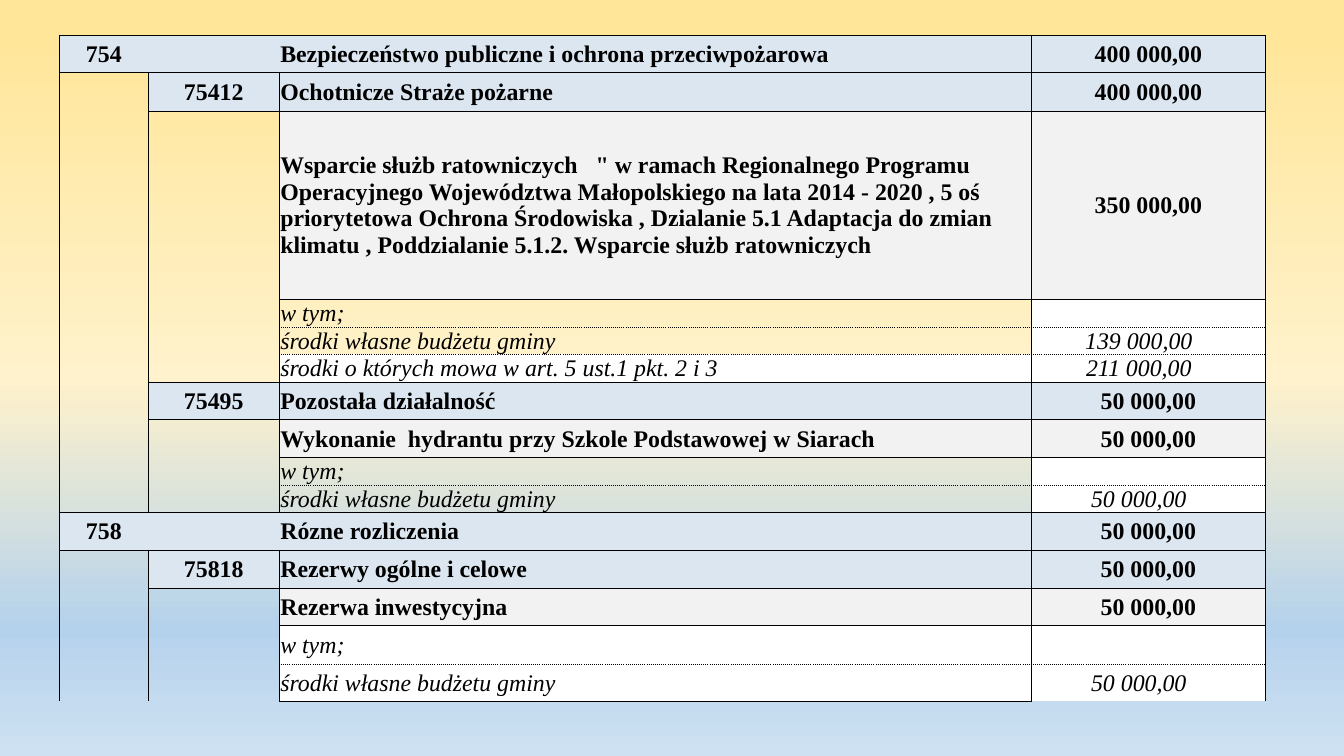
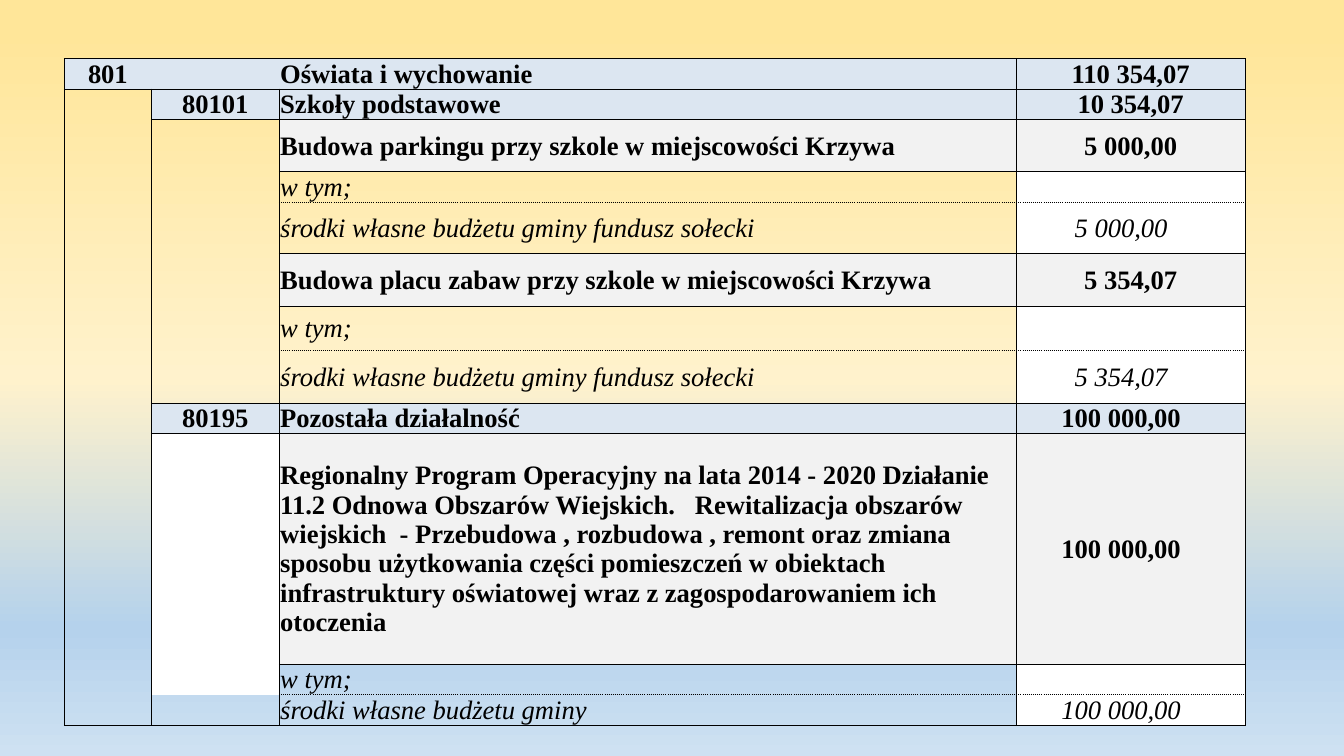
from lxml.etree import SubElement
from pptx import Presentation
from pptx.dml.color import RGBColor
from pptx.enum.text import MSO_ANCHOR, PP_ALIGN
from pptx.oxml.ns import qn
from pptx.util import Inches, Pt

COLORS = {
    "black": "000000",
    "white": "FFFFFF",
    "blue": "DCE6F1",
    "grey": "F2F2F2",
}
BACKDROP = [(4, "FFE699"), (50, "FFF2CC"), (83, "B5D2EC"), (100, "CEE1F2")]
FONT = "Times New Roman"
PLAIN_TABLE_STYLE = "{2D5ABB26-0587-4C30-8999-92F81FD0307C}"
FILLS = {"division": "blue", "chapter": "blue", "task": "grey", "detail": "white"}
FIRST_FILLED = {"division": 0, "chapter": 1, "task": 2, "detail": 3}
OWN_FUNDS = "środki własne budżetu gminy"
VILLAGE_FUND = "środki własne budżetu gminy fundusz sołecki"

TABLES = [
    {
        "left": 0.59, "top": 0.35, "size": 17,
        "columns": [0.88, 1.3, 7.46, 2.32],
        "white": {(5, 2), (13, 2), (14, 2)},
        "shifted": set(),
        "closed_columns": {2},
        "merges": {},
        "rows": [
            ("division", 0.37, "754", "Bezpieczeństwo publiczne i ochrona przeciwpożarowa", "400 000,00"),
            ("chapter", 0.38, "75412", "Ochotnicze Straże pożarne", "400 000,00"),
            ("task", 1.87, "", "Wsparcie służb ratowniczych   \" w ramach Regionalnego Programu "
             "Operacyjnego Województwa Małopolskiego na lata 2014 - 2020 , 5 oś priorytetowa "
             "Ochrona Środowiska , Dzialanie 5.1 Adaptacja do zmian klimatu , "
             "Poddzialanie 5.1.2. Wsparcie służb ratowniczych", "350 000,00"),
            ("detail", 0.27, "", "w tym;", ""),
            ("detail", 0.27, "", OWN_FUNDS, "139 000,00"),
            ("detail", 0.27, "", "środki o których mowa w art. 5 ust.1 pkt. 2 i 3", "211 000,00"),
            ("chapter", 0.37, "75495", "Pozostała działalność", "50 000,00"),
            ("task", 0.38, "", "Wykonanie  hydrantu przy Szkole Podstawowej w Siarach", "50 000,00"),
            ("detail", 0.27, "", "w tym;", ""),
            ("detail", 0.27, "", OWN_FUNDS, "50 000,00"),
            ("division", 0.37, "758", "Rózne rozliczenia", "50 000,00"),
            ("chapter", 0.38, "75818", "Rezerwy ogólne i celowe", "50 000,00"),
            ("task", 0.37, "", "Rezerwa inwestycyjna", "50 000,00"),
            ("detail", 0.38, "", "w tym;", ""),
            ("detail", 0.37, "", OWN_FUNDS, "50 000,00"),
        ],
    },
    {
        "left": 0.64, "top": 0.58, "size": 19,
        "columns": [0.86, 1.27, 7.31, 2.27],
        "white": {(10, 1), (11, 1)},
        "shifted": {9, 10},
        "closed_columns": {0, 1, 2, 3},
        "merges": {(2, 1): 8, (6, 2): 7, (6, 3): 7, (7, 0): 8},
        "rows": [
            ("division", 0.3, "801", "Oświata i wychowanie", "110 354,07"),
            ("chapter", 0.3, "80101", "Szkoły podstawowe", "10 354,07"),
            ("task", 0.52, "", "Budowa parkingu przy szkole w miejscowości Krzywa", "5 000,00"),
            ("detail", 0.3, "", "w tym;", ""),
            ("detail", 0.51, "", VILLAGE_FUND, "5 000,00"),
            ("task", 0.52, "", "Budowa placu zabaw przy szkole w miejscowości Krzywa", "5 354,07"),
            ("detail", 0.3, "", "w tym;", ""),
            ("detail", 0.14, "", "", ""),
            ("detail", 0.52, "", VILLAGE_FUND, "5 354,07"),
            ("chapter", 0.3, "80195", "Pozostała działalność", "100 000,00"),
            ("task", 2.29, "", "Regionalny Program Operacyjny na lata 2014 - 2020 Działanie 11.2 "
             "Odnowa Obszarów Wiejskich.   Rewitalizacja obszarów wiejskich  - Przebudowa , "
             "rozbudowa , remont oraz zmiana sposobu użytkowania części pomieszczeń w obiektach "
             "infrastruktury oświatowej wraz z zagospodarowaniem ich otoczenia", "100 000,00"),
            ("detail", 0.3, "", "w tym;", ""),
            ("detail", 0.3, "", OWN_FUNDS, "100 000,00"),
        ],
    },
]


def add_border(cell, side, width, dash):
    line = SubElement(cell._tc.get_or_add_tcPr(), qn(f"a:ln{side}"), w=str(Pt(width)))
    if dash:
        fill = SubElement(line, qn("a:solidFill"))
        SubElement(fill, qn("a:srgbClr"), val=COLORS["black"])
        SubElement(line, qn("a:prstDash"), val=dash)
    else:
        SubElement(line, qn("a:noFill"))


def edge_above(kinds, row, column, closed_columns):
    if row == len(kinds):
        return "solid" if column in closed_columns else None
    kind = kinds[row]
    previous = kinds[row - 1] if row else None
    if column >= 2:
        return "sysDot" if kind == previous == "detail" else "solid"
    heads = ("division", "chapter")[:column + 1]
    return "solid" if kind in heads or previous in heads else None


deck = Presentation()
deck.slide_width, deck.slide_height = Inches(13.33), Inches(7.5)

master = deck.slide_master
backdrop = master.background.fill
backdrop.gradient()
backdrop.gradient_angle = 270
stops = master.element.xpath(".//p:bg//a:gsLst")[0]
stops.clear()
for position, color in BACKDROP:
    stop = SubElement(stops, qn("a:gs"), pos=str(position * 1000))
    SubElement(stop, qn("a:srgbClr"), val=color)

for plan in TABLES:
    page = deck.slides.add_slide(deck.slide_layouts[6])
    rows, columns = plan["rows"], plan["columns"]
    kinds = [row[0] for row in rows]
    frame = page.shapes.add_table(
        len(rows), len(columns), Inches(plan["left"]), Inches(plan["top"]),
        Inches(sum(columns)), Inches(sum(row[1] for row in rows)))
    table = frame.table
    table.first_row = table.horz_banding = False
    table._tbl.tblPr.find(qn("a:tableStyleId")).text = PLAIN_TABLE_STYLE
    for column, width in enumerate(columns):
        table.columns[column].width = Inches(width)
    for (first, column), last in plan["merges"].items():
        table.cell(first, column).merge(table.cell(last, column))

    for index, (kind, height, code, name, amount) in enumerate(rows):
        table.rows[index].height = Inches(height)
        texts = ["", "", name, amount]
        texts[0 if kind == "division" else 1] = code
        for column, text in enumerate(texts):
            cell = table.cell(index, column)
            cell.vertical_anchor = MSO_ANCHOR.MIDDLE
            cell.margin_left = cell.margin_right = cell.margin_top = Inches(0.01)
            cell.margin_bottom = 0
            if column == 3 and (kind == "detail" or index in plan["shifted"]):
                cell.margin_right = Inches(0.2)

            paragraph = cell.text_frame.paragraphs[0]
            paragraph.alignment = PP_ALIGN.LEFT if column == 2 else PP_ALIGN.CENTER
            if text:
                paragraph.text = text
            else:
                SubElement(paragraph._p, qn("a:endParaRPr"), sz=str(plan["size"] * 100))
            font = paragraph.font
            font.name, font.size = FONT, Pt(plan["size"])
            font.bold, font.italic = kind != "detail", kind == "detail"
            font.color.rgb = RGBColor.from_string(COLORS["black"])

            joined = kind == "division"
            add_border(cell, "L", 0.5 if column else 1,
                       None if joined and column in (1, 2) else "solid")
            add_border(cell, "R", 1 if column == 3 else 0.5,
                       None if joined and column in (0, 1) else "solid")
            last = plan["merges"].get((index, column), index)
            for side, row in (("T", index), ("B", last + 1)):
                add_border(cell, side, 0.5,
                           edge_above(kinds, row, column, plan["closed_columns"]))

            if (index, column) in plan["white"]:
                fill = "white"
            else:
                fill = FILLS[kind] if column >= FIRST_FILLED[kind] else None
            if fill:
                cell.fill.solid()
                cell.fill.fore_color.rgb = RGBColor.from_string(COLORS[fill])
            else:
                cell.fill.background()

deck.save("out.pptx")
